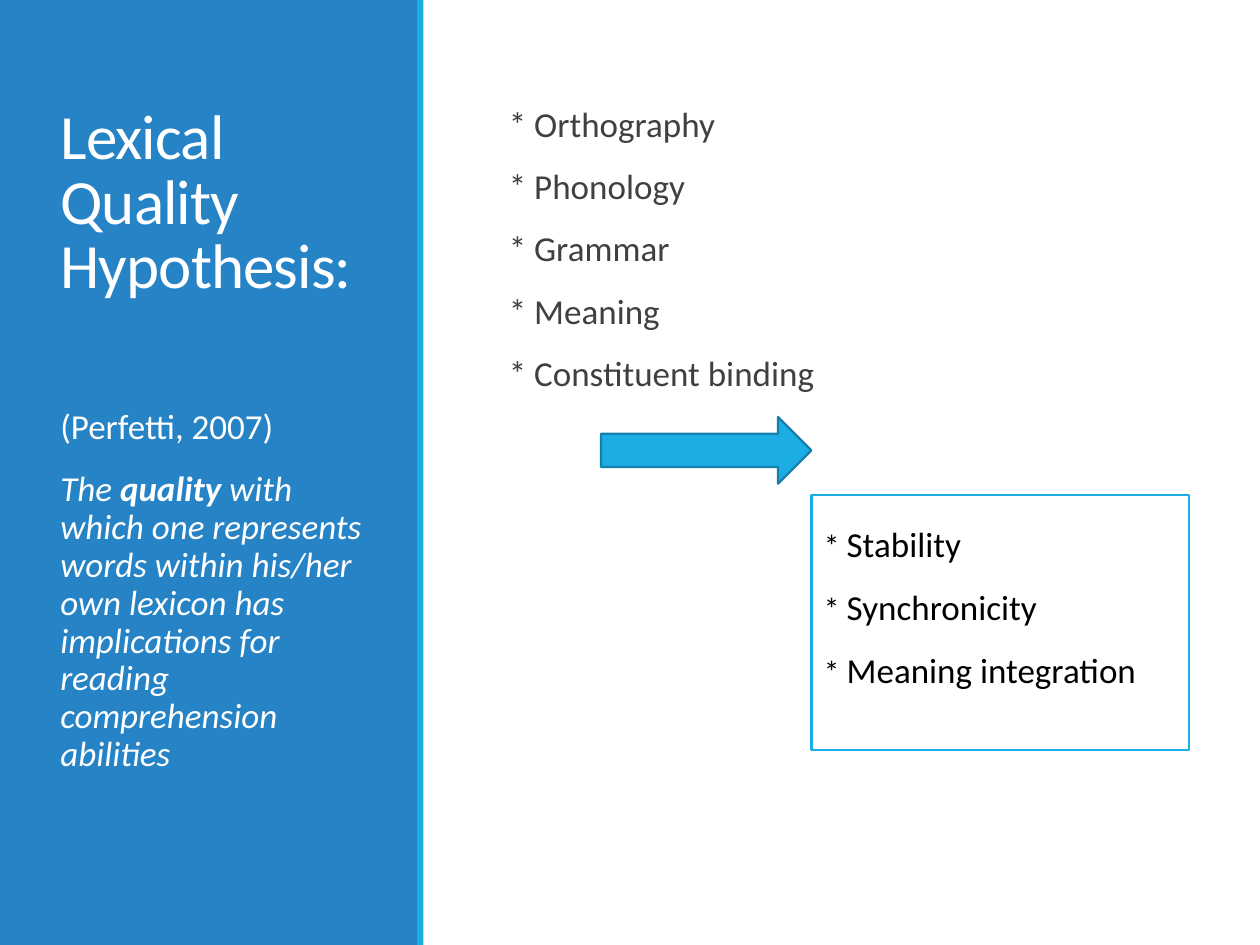
from dataclasses import dataclass

from pptx import Presentation
from pptx.dml.color import RGBColor
from pptx.enum.shapes import MSO_SHAPE
from pptx.enum.text import MSO_ANCHOR, MSO_AUTO_SIZE, PP_ALIGN
from pptx.util import Inches, Pt


@dataclass(frozen=True)
class Theme:
    """Colours, font and type sizes."""
    font: str = "Calibri"
    blue: str = "2683C6"
    cyan: str = "1CADE4"
    edge: str = "1580A9"
    white: str = "FFFFFF"
    grey: str = "404040"
    black: str = "000000"
    head: int = 36
    body: int = 20
    star: int = 18


def write(frame, paras, font, size, color, line=0.9, before=0, after=0,
          track=0, left=0.1, anchor=MSO_ANCHOR.TOP):
    """Fill a frame with paragraphs, each a list of (text, format) runs."""
    frame.word_wrap = True
    frame.auto_size = MSO_AUTO_SIZE.NONE
    frame.vertical_anchor = anchor
    frame.margin_left = Inches(left)
    for at, runs in enumerate(paras):
        para = frame.add_paragraph() if at else frame.paragraphs[0]
        para.alignment = PP_ALIGN.LEFT
        para.line_spacing = line
        para.space_before, para.space_after = Pt(before), Pt(after)
        for text, form in runs:
            run = para.add_run()
            run.text = text
            run.font.name = font
            run.font.size = Pt(form.get("size", size))
            run.font.bold = form.get("bold", False)
            run.font.italic = form.get("italic", False)
            run.font.color.rgb = RGBColor.from_string(color)
            if track:
                run.font._element.set("spc", str(int(track * 100)))


class Deck:
    """Holds the theme and the current slide."""

    def __init__(self, theme):
        """Start a deck with one title-only slide."""
        self.theme = theme
        self.prs = Presentation()
        self.prs.slide_width, self.prs.slide_height = Inches(10), Inches(7.5)
        self.slide = self.prs.slides.add_slide(self.prs.slide_layouts[5])

    def shape(self, kind, box, fill, line=None):
        """Add a flat preset shape."""
        item = self.slide.shapes.add_shape(kind, *map(Inches, box))
        item.shadow.inherit = False
        item.fill.solid()
        item.fill.fore_color.rgb = RGBColor.from_string(fill)
        if line:
            item.line.color.rgb = RGBColor.from_string(line)
            item.line.width = Pt(1.25)
        else:
            item.line.fill.background()
        return item

    def title(self, text, box):
        """Place the title in front of the side panel."""
        item = self.slide.shapes.title
        item.left, item.top, item.width, item.height = map(Inches, box)
        item.element.getparent().append(item.element)
        look = self.theme
        write(item.text_frame, [[(text, {})]], look.font, look.head, look.white,
              line=0.85, track=-0.5, anchor=MSO_ANCHOR.BOTTOM)

    def text(self, paras, box, color):
        """Add a text box of spaced paragraphs."""
        item = self.slide.shapes.add_textbox(*map(Inches, box))
        look = self.theme
        write(item.text_frame, paras, look.font, look.body, color,
              before=12, after=2)

    def panel(self, paras, box):
        """Add an outlined box of text."""
        look = self.theme
        item = self.shape(MSO_SHAPE.RECTANGLE, box, look.white, look.cyan)
        write(item.text_frame, paras, look.font, look.body, look.black, line=1.5)


def main():
    """Build and save the slide."""
    look = Theme()
    deck = Deck(look)
    deck.shape(MSO_SHAPE.RECTANGLE, (0, 0, 3.32, 7.5), look.blue)
    deck.shape(MSO_SHAPE.RECTANGLE, (3.31, 0, 0.05, 7.5), look.cyan)
    deck.title("Lexical Quality Hypothesis:", (0.38, -0.06, 2.62, 2.5))

    parts = ["Orthography", "Phonology", "Grammar", "Meaning",
             "Constituent binding"]
    deck.text([[("* " + part, {})] for part in parts],
              (3.94, 0.8, 5.33, 2.6), look.grey)

    slant = {"italic": True}
    claim = [("The ", slant), ("quality ", {"italic": True, "bold": True}),
             ("with which one represents words within his/her own lexicon "
              "has implications for reading comprehension abilities", slant)]
    deck.text([[("(Perfetti, 2007)", {})], claim],
              (0.38, 3.2, 2.62, 3.7), look.white)

    deck.shape(MSO_SHAPE.RIGHT_ARROW, (4.77, 3.31, 1.67, 0.53),
               look.cyan, look.edge)
    small = {"size": look.star}
    traits = ["Stability", "Synchronicity", "Meaning integration"]
    deck.panel([[("* ", small), (trait, {})] for trait in traits],
               (6.44, 3.93, 3, 2.02))
    deck.prs.save("out.pptx")


if __name__ == "__main__":
    main()
